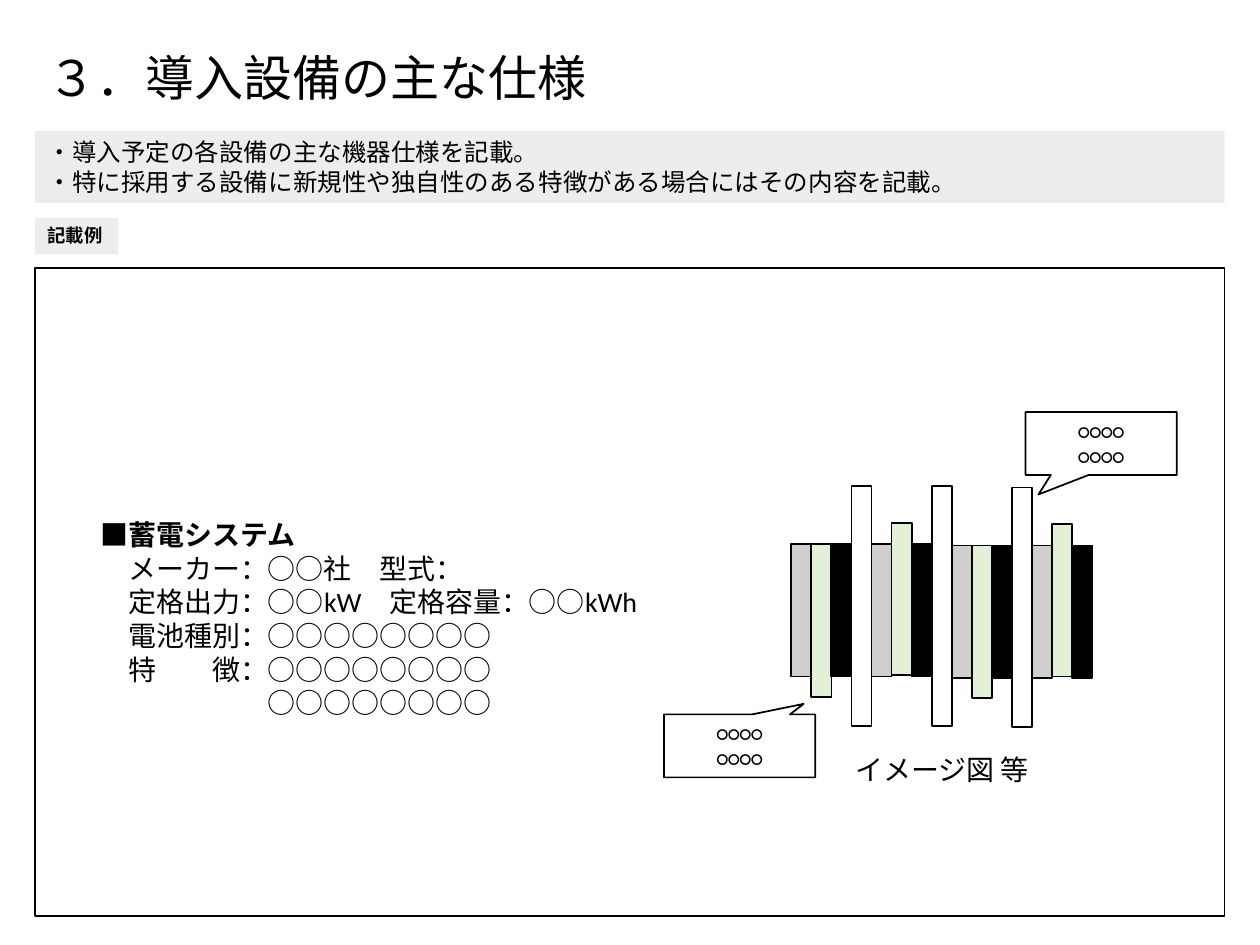
from pptx import Presentation
from pptx.dml.color import RGBColor
from pptx.enum.shapes import MSO_SHAPE
from pptx.enum.text import MSO_ANCHOR, PP_ALIGN
from pptx.util import Inches, Pt

RECT = MSO_SHAPE.RECTANGLE
CALLOUT = MSO_SHAPE.RECTANGULAR_CALLOUT
TOP, MIDDLE = MSO_ANCHOR.TOP, MSO_ANCHOR.MIDDLE
LEFT, CENTER = PP_ALIGN.LEFT, PP_ALIGN.CENTER
COLORS = {"ink": "000000", "panel": "EDEDED", "gray": "D0CECE",
          "green": "E2F0D9", "white": "FFFFFF"}
MARGIN, CONTENT_WIDTH = 0.28, 9.44


def add_block(parent, kind, box, fill=None, outlined=True):
    block = parent.add_shape(kind, *map(Inches, box))
    block.shadow.inherit = False
    if fill:
        block.fill.solid()
        block.fill.fore_color.rgb = RGBColor.from_string(COLORS[fill])
    else:
        block.fill.background()
    if outlined:
        block.line.color.rgb = RGBColor.from_string(COLORS["ink"])
        block.line.width = Pt(1)
    else:
        block.line.fill.background()
    return block


def write(holder, lines, size, align=LEFT, anchor=TOP, wrap=True, bold=False):
    frame = holder.text_frame
    frame.text = "\n".join(lines)
    frame.word_wrap = wrap
    frame.vertical_anchor = anchor
    for paragraph in frame.paragraphs:
        paragraph.alignment = align
        for run in paragraph.runs:
            run.font.name = "Calibri"
            run.font.size = Pt(size)
            run.font.bold = bold
            run.font.color.rgb = RGBColor.from_string(COLORS["ink"])
    return frame


prs = Presentation()
prs.slide_width, prs.slide_height = Inches(10), Inches(7.5)
slide = prs.slides.add_slide(prs.slide_layouts[5])
shapes = slide.shapes

title = shapes.title
title.left, title.top = Inches(MARGIN), Inches(0.23)
title.width, title.height = Inches(CONTENT_WIDTH), Inches(0.82)
heading = write(title, ["３．導入設備の主な仕様"], 28, anchor=MIDDLE)
heading.paragraphs[0].line_spacing = 0.9

specs = shapes.add_textbox(*map(Inches, (0.7, 4.06, 4.51, 1.72)))
spec_lines = write(specs, [
    "■蓄電システム",
    "　メーカー：○○社　型式：",
    "　定格出力：○○kW　定格容量：○○kWh",
    "　電池種別：○○○○○○○○",
    "　特　　徴：○○○○○○○○",
    "　　　　　　○○○○○○○○",
], 16)
spec_lines.paragraphs[0].runs[0].font.bold = True

add_block(shapes, RECT, (MARGIN, 2.13, CONTENT_WIDTH, 5.14))

guidance = add_block(shapes, RECT, (MARGIN, 1.04, CONTENT_WIDTH, 0.57), "panel", False)
write(guidance, [
    "・導入予定の各設備の主な機器仕様を記載。",
    "・特に採用する設備に新規性や独自性のある特徴がある場合にはその内容を記載。",
], 14)

example_label = add_block(shapes, RECT, (MARGIN, 1.73, 0.66, 0.29), "panel", False)
write(example_label, ["記載例"], 10.5, wrap=False, bold=True)

caption = shapes.add_textbox(*map(Inches, (6.69, 5.92, 1.6, 0.37)))
write(caption, ["イメージ図 等"], 16, wrap=False)

LAYERS = [("gray", 4.32, 1.05), ("green", 4.32, 1.21),
          ("ink", 4.32, 1.05), ("white", 3.86, 1.9)]
LAYER_COUNT, LAYER_WIDTH, GREEN_LIFT = 15, 0.16, 0.17
battery = shapes.add_group_shape()
for index in range(LAYER_COUNT):
    cell, position = divmod(index, len(LAYERS))
    color, top, height = LAYERS[position]
    if color == "green" and cell % 2:
        top -= GREEN_LIFT
    if cell >= 2:
        top += 0.01
    left = 6.28 + index * (8.51 - 6.28) / (LAYER_COUNT - 1)
    add_block(battery.shapes, RECT, (left, top, LAYER_WIDTH, height), color)

for left, top, tip in [(8.14, 3.27, (-0.415, 0.81)), (5.27, 5.67, (0.424, -0.667))]:
    callout = add_block(shapes, CALLOUT, (left, top, 1.2, 0.5))
    callout.adjustments[0], callout.adjustments[1] = tip
    write(callout, ["○○○○"] * 2, 12, CENTER, MIDDLE)

prs.save("out.pptx")
